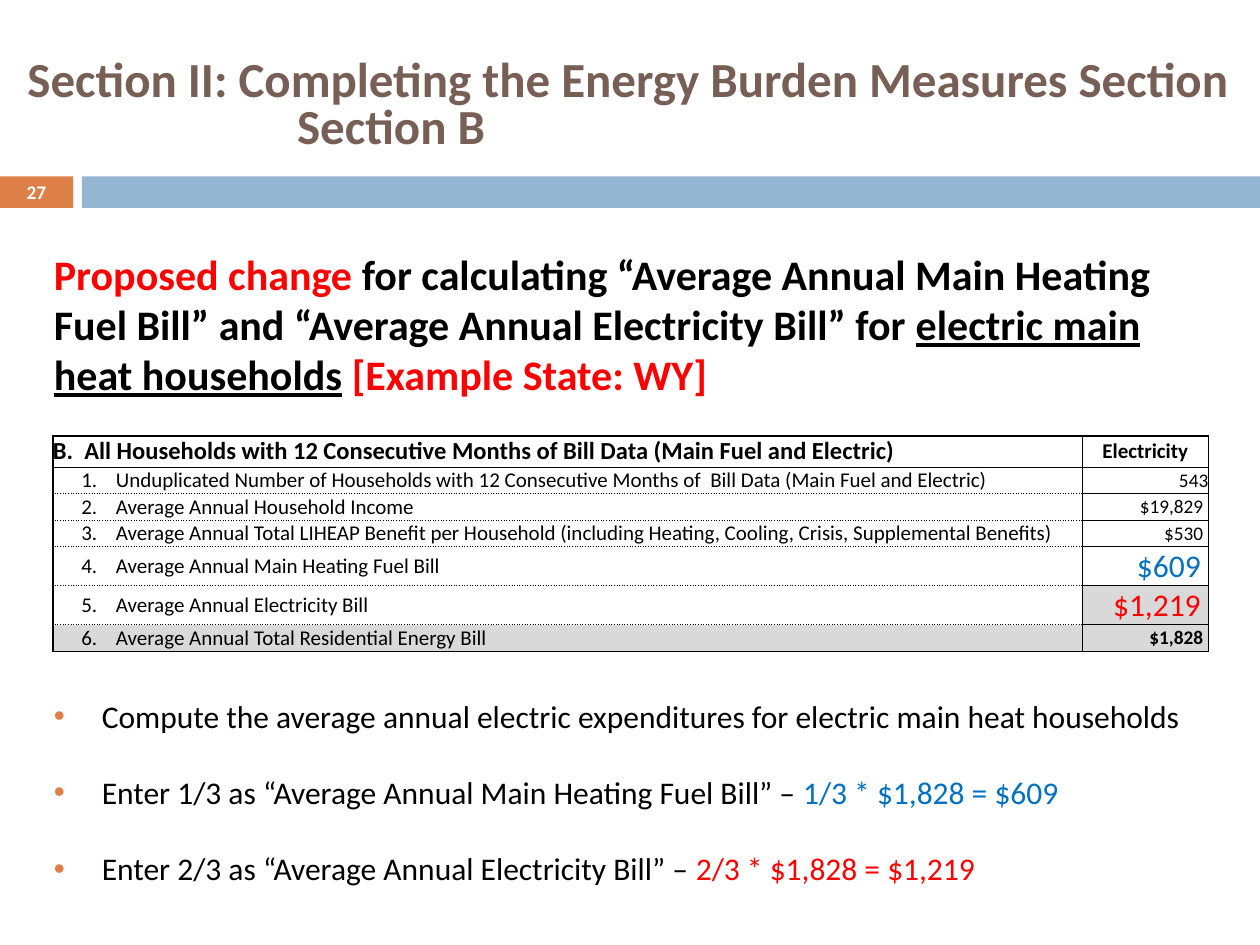
from dataclasses import dataclass

from lxml.etree import SubElement
from pptx import Presentation
from pptx.dml.color import RGBColor
from pptx.enum.shapes import MSO_SHAPE as Shape
from pptx.enum.text import MSO_ANCHOR as Anchor, PP_ALIGN as Align
from pptx.oxml.ns import qn
from pptx.util import Inches, Pt

COLS, ROWS = 100, 75
BLACK, WHITE, RED, BLUE = "000000", "FFFFFF", "FF0000", "0070C0"
ORANGE, SKY, BROWN, GREY = "DD8047", "94B6D2", "775F55", "D9D9D9"


@dataclass(frozen=True)
class Area:
    """Place on the slide, in grid columns and rows."""
    col: float
    row: float
    cols: float
    rows: float


@dataclass(frozen=True)
class Run:
    """Text with one look."""
    text: str
    size: float
    color: str = BLACK
    bold: bool = False
    underline: bool = False


@dataclass(frozen=True)
class Measure:
    """Numbered row of the table with its value."""
    label: str
    value: Run
    rows: float = 2.1
    inset: float = 0.4
    label_fill: str = WHITE
    value_fill: str = WHITE


TITLE = Run("Section II: Completing the Energy Burden Measures Section Section B",
            28, BROWN, True)
HEADING = [
    Run("Proposed change ", 24, RED, True),
    Run("for calculating “Average Annual Main Heating Fuel Bill” and "
        "“Average Annual Electricity Bill” for ", 24, bold=True),
    Run("electric main heat households", 24, bold=True, underline=True),
    Run(" ", 24, bold=True),
    Run("[Example State: WY]", 24, RED, True),
]
BULLETS = [
    [Run("Compute the average annual electric expenditures for electric main heat households", 18)],
    [Run("Enter 1/3 as “Average Annual Main Heating Fuel Bill” – ", 18),
     Run("1/3 * $1,828 = $609", 18, BLUE)],
    [Run("Enter 2/3 as “Average Annual Electricity Bill” – ", 18),
     Run("2/3 * $1,828 = $1,219", 18, RED)],
]
HEADER = [
    Run("B.  All Households with 12 Consecutive Months of Bill Data (Main Fuel and Electric)",
        14, bold=True),
    Run("Electricity", 12, bold=True),
]
MEASURES = [
    Measure("Unduplicated Number of Households with 12 Consecutive Months of  Bill Data "
            "(Main Fuel and Electric)", Run("543", 11), inset=0),
    Measure("Average Annual Household Income", Run("$19,829", 11)),
    Measure("Average Annual Total LIHEAP Benefit per Household (including Heating, Cooling, "
            "Crisis, Supplemental Benefits)", Run("$530", 11)),
    Measure("Average Annual Main Heating Fuel Bill", Run("$609", 18, BLUE), 3.1, 0.6),
    Measure("Average Annual Electricity Bill", Run("$1,219", 18, RED), 3.1, 0.6,
            value_fill=GREY),
    Measure("Average Annual Total Residential Energy Bill", Run("$1,828", 11, bold=True),
            label_fill=GREY, value_fill=GREY),
]


def grid(n: float) -> int:
    """Turn grid units into a length."""
    return Inches(n / 10)


def place(area: Area) -> list[int]:
    """Turn an area into left, top, width and height."""
    return [grid(n) for n in (area.col, area.row, area.cols, area.rows)]


def rgb(color: str) -> RGBColor:
    """Read a hex colour."""
    return RGBColor.from_string(color)


def add_runs(p, runs: list[Run]) -> None:
    """Write runs into a paragraph."""
    for run in runs:
        r = p.add_run()
        r.text = run.text
        r.font.name, r.font.size = "Calibri", Pt(run.size)
        r.font.bold, r.font.underline = run.bold, run.underline
        r.font.color.rgb = rgb(run.color)


def hang(p, left: float, first: float) -> None:
    """Set the left margin and first-line indent."""
    pPr = p._p.get_or_add_pPr()
    pPr.set("marL", str(grid(left)))
    pPr.set("indent", str(grid(first)))


def add_bullet(p, color: str) -> None:
    """Give a paragraph a coloured bullet."""
    pPr = p._p.get_or_add_pPr()
    SubElement(SubElement(pPr, qn("a:buClr")), qn("a:srgbClr"), val=color)
    SubElement(pPr, qn("a:buFont"), typeface="Arial")
    SubElement(pPr, qn("a:buChar"), char="•")


def add_bar(s, area: Area, color: str):
    """Draw a plain bar."""
    sp = s.shapes.add_shape(Shape.RECTANGLE, *place(area))
    sp.shadow.inherit = False
    sp.fill.solid()
    sp.fill.fore_color.rgb = rgb(color)
    sp.line.fill.background()
    return sp


def add_text(s, area: Area, anchor: Anchor):
    """Add an empty wrapping text box and return its frame."""
    tf = s.shapes.add_textbox(*place(area)).text_frame
    tf.word_wrap = True
    tf.vertical_anchor = anchor
    return tf


def fill_cell(cell, run: Run, align: Align, fill: str, edges: dict, inset: float = 0):
    """Write, border and fill one cell, and return its paragraph."""
    cell.margin_left = cell.margin_top = cell.margin_bottom = 0
    cell.margin_right = grid(inset)
    cell.vertical_anchor = Anchor.MIDDLE
    tcPr = cell._tc.get_or_add_tcPr()
    for side in "LRTB":
        width, dash = edges[side]
        ln = SubElement(tcPr, qn(f"a:ln{side}"), w=str(Pt(width)))
        SubElement(SubElement(ln, qn("a:solidFill")), qn("a:srgbClr"), val=BLACK)
        SubElement(ln, qn("a:prstDash"), val=dash)
    cell.fill.solid()
    cell.fill.fore_color.rgb = rgb(fill)
    p = cell.text_frame.paragraphs[0]
    p.alignment = align
    add_runs(p, [run])
    return p


def add_measures(s, area: Area) -> None:
    """Build the table of household measures."""
    table = s.shapes.add_table(len(MEASURES) + 1, 2, *place(area)).table
    table.first_row = table.horz_banding = False
    for column, width in zip(table.columns, (area.cols - 10, 10)):
        column.width = grid(width)
    for row, height in zip(table.rows, [2.5] + [m.rows for m in MEASURES]):
        row.height = grid(height)
    thick, thin, dots = (1, "solid"), (0.5, "solid"), (0.5, "sysDot")
    left, right = {"L": thick, "R": thin}, {"L": thin, "R": thick}
    top = {"T": thick, "B": thin}
    fill_cell(table.cell(0, 0), HEADER[0], Align.LEFT, WHITE, left | top)
    table.cell(0, 0).vertical_anchor = Anchor.TOP
    fill_cell(table.cell(0, 1), HEADER[1], Align.CENTER, WHITE, right | top)
    for i, m in enumerate(MEASURES, 1):
        last = i == len(MEASURES)
        label_edges = left | {"T": thin if i == 1 else dots, "B": thick if last else dots}
        value_edges = right | {"T": thin, "B": thick if last else thin}
        p = fill_cell(table.cell(i, 0), Run(f"{i}.\t{m.label}", 12), Align.LEFT,
                      m.label_fill, label_edges)
        hang(p, 5, -2.75)
        fill_cell(table.cell(i, 1), m.value, Align.RIGHT, m.value_fill, value_edges, m.inset)


def add_body(s, area: Area) -> None:
    """Write the heading and the bullets below the table."""
    tf = add_text(s, area, Anchor.TOP)
    add_runs(tf.paragraphs[0], HEADING)
    for i, runs in enumerate(BULLETS):
        p = tf.add_paragraph()
        hang(p, 3.8, -3.8)
        p.space_before = Pt(22 if i else 170)
        add_bullet(p, ORANGE)
        add_runs(p, runs)


def main() -> None:
    """Build and save the slide."""
    prs = Presentation()
    prs.slide_width, prs.slide_height = grid(COLS), grid(ROWS)
    s = prs.slides.add_slide(prs.slide_layouts[6])
    add_bar(s, Area(0, 14, 5.8, 2.5), ORANGE)
    add_bar(s, Area(6.5, 14, COLS - 6.5, 2.5), SKY)
    p = add_text(s, Area(0, 3.1, COLS, 10.8), Anchor.MIDDLE).paragraphs[0]
    hang(p, 22.6, -21.4)
    p.line_spacing = 0.8
    add_runs(p, [TITLE])
    p = add_text(s, Area(0, 13.9, 5.8, 2.7), Anchor.MIDDLE).paragraphs[0]
    p.alignment = Align.CENTER
    add_runs(p, [Run("27", 11, WHITE, True)])
    add_body(s, Area(3.3, 19.2, 95, 54.2))
    add_measures(s, Area(4.2, 34.6, 91.7, 17.1))
    prs.save("out.pptx")


if __name__ == "__main__":
    main()
